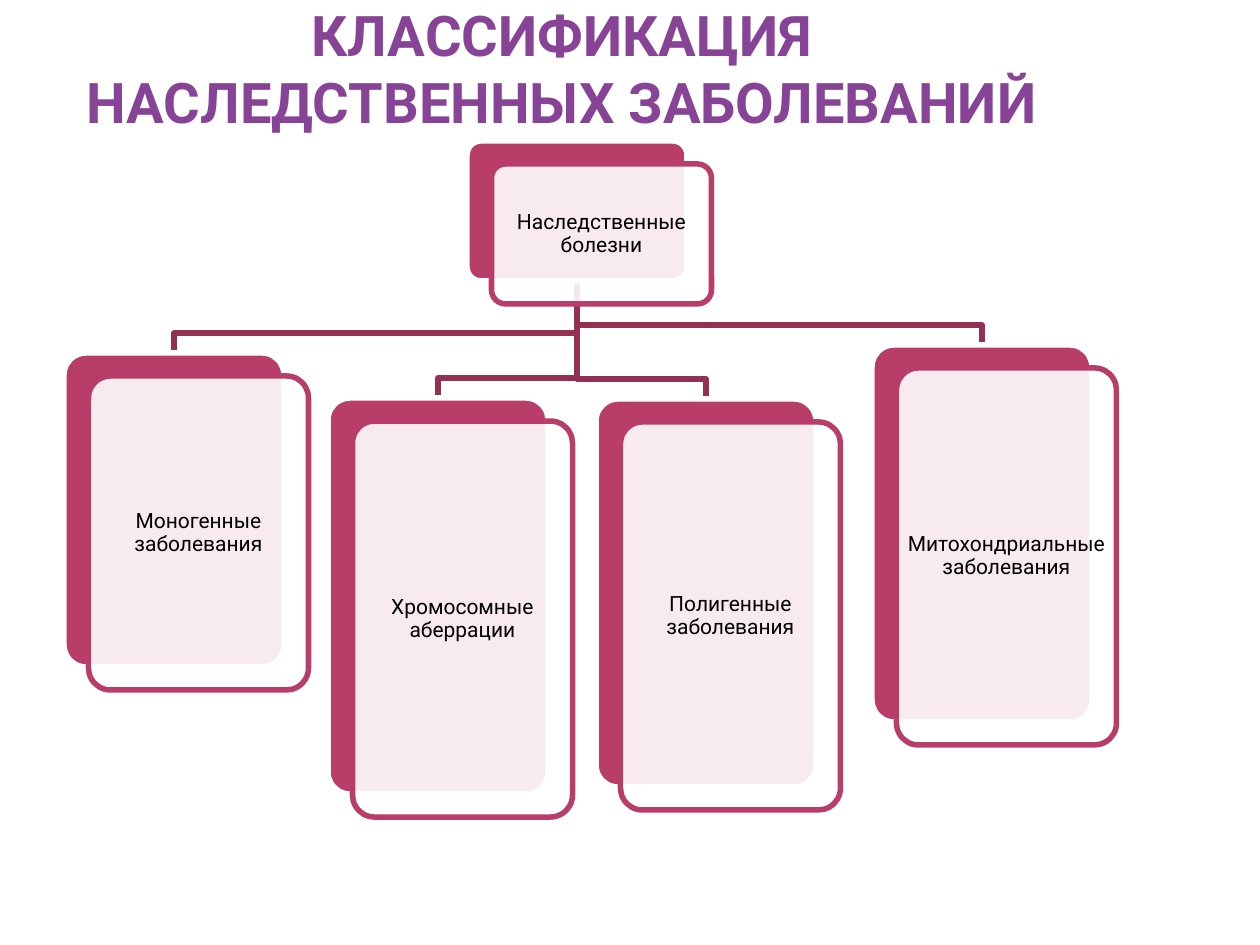
"""Build a slide with a tree of hereditary disease classes."""
import pptx
import pptx.util
import pptx.dml.color
import pptx.enum.shapes
import pptx.enum.text
import pptx.oxml

RGBColor = pptx.dml.color.RGBColor
BERRY = RGBColor(0xB8, 0x3D, 0x68)
WINE = RGBColor(0x93, 0x31, 0x53)
PURPLE = RGBColor(0x87, 0x43, 0x96)
WHITE = RGBColor(0xFF, 0xFF, 0xFF)
BLACK = RGBColor(0, 0, 0)

TITLE = "КЛАССИФИКАЦИЯ НАСЛЕДСТВЕННЫХ ЗАБОЛЕВАНИЙ"
TITLE_BOX = (63, 44, 998, 91)
ROOT = ("Наследственные болезни", 467, 141, 140)
CHILDREN = [
    ("Моногенные заболевания", 64, 353, 314),
    ("Хромосомные аберрации", 328, 398, 396),
    ("Полигенные заболевания", 596, 399, 388),
    ("Митохондриальные заболевания", 872, 345, 377),
]
CARD_WIDTH = 220
OFFSET_X, OFFSET_Y = 25, 23
STUB = 20
LINE_WIDTH = pptx.util.Pt(3.15)
PX = 914400 / 126

TITLE_FONT = {"name": "Roboto", "size": pptx.util.Pt(32), "bold": True}
CARD_FONT = {"name": "Roboto", "size": pptx.util.Pt(12), "bold": False}


def emu(*lengths):
    return [round(length * PX) for length in lengths]


def write(shape, text, font_format, color, anchor, margin_x, margin_y, spacing):
    frame = shape.text_frame
    frame_format = {
        "word_wrap": True, "vertical_anchor": anchor,
        "margin_left": margin_x, "margin_right": margin_x,
        "margin_top": margin_y, "margin_bottom": margin_y,
    }
    for name, value in frame_format.items():
        setattr(frame, name, value)
    paragraph = frame.paragraphs[0]
    paragraph.text = text
    paragraph.alignment = pptx.enum.text.PP_ALIGN.CENTER
    paragraph.line_spacing = spacing
    for name, value in font_format.items():
        setattr(paragraph.font, name, value)
    paragraph.font.color.rgb = color


def add_panel(slide, left, top, height, fill, line):
    shape = slide.shapes.add_shape(
        pptx.enum.shapes.MSO_SHAPE.ROUNDED_RECTANGLE,
        *emu(left, top, CARD_WIDTH, height))
    shape.adjustments[0] = 0.1
    shape.shadow.inherit = False
    shape.fill.solid()
    shape.fill.fore_color.rgb = fill
    shape.line.color.rgb = line
    shape.line.width = LINE_WIDTH
    return shape


def add_card(slide, text, left, top, height):
    add_panel(slide, left, top, height, BERRY, WHITE)
    front = add_panel(slide, left + OFFSET_X - 0.5, top + OFFSET_Y, height, WHITE, BERRY)
    color = front.fill._xPr.find(".//" + pptx.oxml.ns.qn("a:srgbClr"))
    alpha = pptx.oxml.parse_xml(
        f'<a:alpha {pptx.oxml.ns.nsdecls("a")} val="90000"/>')
    color.append(alpha)
    write(front, text, CARD_FONT, BLACK, pptx.enum.text.MSO_ANCHOR.MIDDLE,
          0, pptx.util.Inches(0.05), 0.9)


def add_branch(slide, child):
    root_x, root_y = ROOT[1] + CARD_WIDTH / 2, ROOT[2] + ROOT[3]
    child_x, child_y = child[1] + CARD_WIDTH / 2, child[2]
    bend_y = child_y - STUB
    builder = slide.shapes.build_freeform(root_x, root_y, scale=PX)
    builder.add_line_segments(
        [(root_x, bend_y), (child_x, bend_y), (child_x, child_y)], close=False)
    branch = builder.convert_to_shape()
    branch.shadow.inherit = False
    branch.fill.background()
    branch.line.color.rgb = WINE
    branch.line.width = LINE_WIDTH


def main():
    presentation = pptx.Presentation()
    presentation.slide_width, presentation.slide_height = emu(1260, 945)
    slide = presentation.slides.add_slide(presentation.slide_layouts[6])
    for child in reversed(CHILDREN):
        add_branch(slide, child)
    for card in [ROOT, *CHILDREN]:
        add_card(slide, *card)
    title = slide.shapes.add_textbox(*emu(*TITLE_BOX))
    write(title, TITLE, TITLE_FONT, PURPLE, pptx.enum.text.MSO_ANCHOR.BOTTOM,
          pptx.util.Inches(0.05), 0, 1.0)
    presentation.save("out.pptx")


if __name__ == "__main__":
    main()
